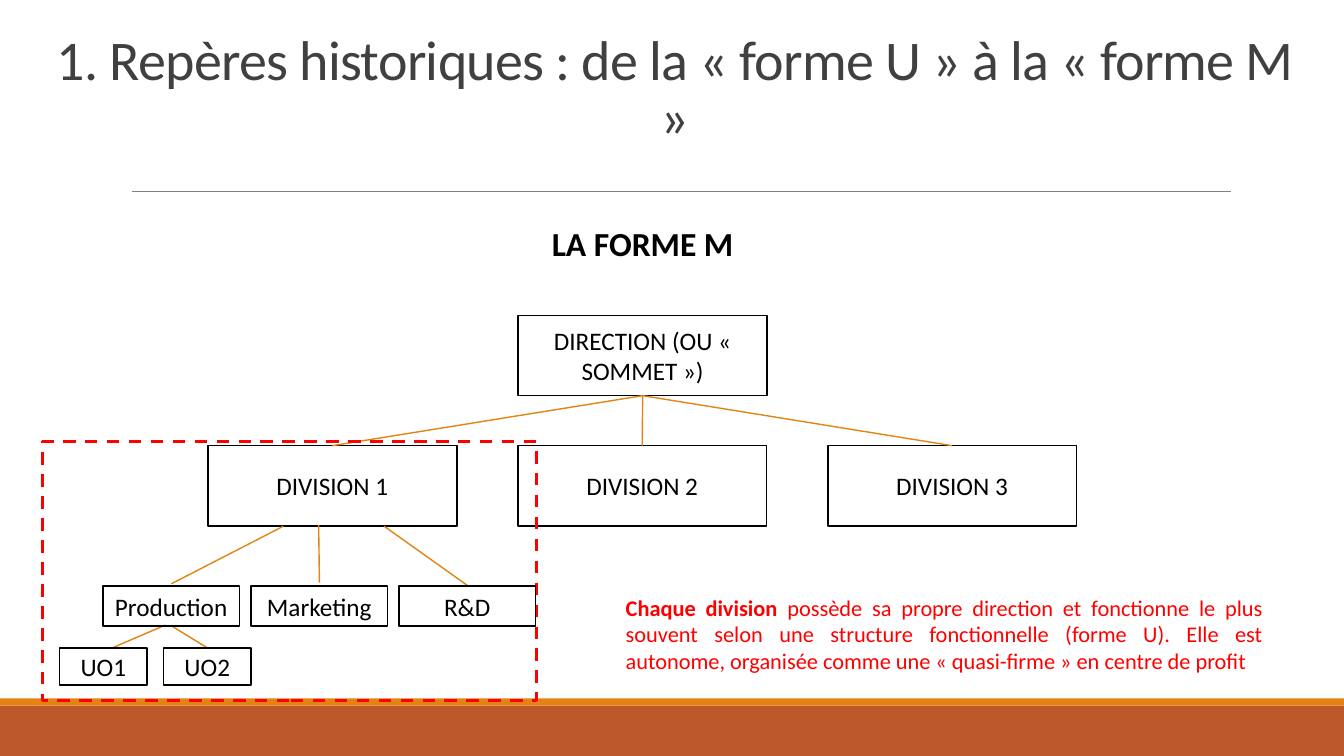
from dataclasses import dataclass

from lxml import etree
from pptx import Presentation
from pptx.dml.color import RGBColor
from pptx.enum import dml, shapes, text
from pptx.oxml import ns
from pptx.util import Cm, Pt

FONT = "Calibri"
BLACK, RED, ORANGE, RUST = "000000", "FF0000", "E48312", "BD582C"
TITLE_GREY, RULE_GREY = "404040", "808080"
SLIDE_WIDTH, SLIDE_HEIGHT = 33.87, 19.05


@dataclass(frozen=True)
class Box:
    left: float
    top: float
    width: float
    height: float
    label: str = ""

    @property
    def centre(self) -> float:
        return self.left + self.width / 2

    @property
    def bottom(self) -> float:
        return self.top + self.height

    def lengths(self) -> tuple:
        return Cm(self.left), Cm(self.top), Cm(self.width), Cm(self.height)


@dataclass(frozen=True)
class Link:
    start_x: float
    start_y: float
    end_x: float
    end_y: float


def box_row(labels: list[str], left: float, top: float, width: float,
            height: float, pitch: float) -> list[Box]:
    return [Box(left + i * pitch, top, width, height, label)
            for i, label in enumerate(labels)]


DIRECTION = Box(13.06, 7.95, 6.27, 2.02, "DIRECTION (OU « SOMMET »)")
DIVISIONS = box_row(["DIVISION 1", "DIVISION 2", "DIVISION 3"],
                    5.24, 11.23, 6.27, 2.02, 7.81)
FUNCTIONS = box_row(["Production", "Marketing", "R&D"],
                    2.59, 14.76, 3.45, 1.02, 3.73)
UNITS = box_row(["UO1", "UO2"], 1.5, 16.33, 2.21, 0.94, 2.62)
DIVISION_FRAME = Box(1.07, 11.13, 12.45, 6.53)
BANDS = [(Box(0, 17.78, SLIDE_WIDTH, 1.27), RUST),
         (Box(0, 17.6, SLIDE_WIDTH, 0.18), ORANGE)]
TITLE = Box(0.69, 1.73, 32.64, 2.16,
            "1. Repères historiques : de la « forme U » à la « forme M »")
SUBTITLE = Box(13.06, 5.44, 6.27, 1.37, "LA FORME M")
NOTE = Box(15.52, 14.68, 16.56, 2.59)
NOTE_RUNS = [
    ("Chaque division", True),
    (" possède sa propre direction et fonctionne le plus souvent selon une "
     "structure fonctionnelle (forme U). Elle est autonome, organisée comme "
     "une « quasi-firme » en centre de profit", False),
]
TITLE_RULE = Link(3.33, 4.83, 31.01, 4.83)
LINKS = [Link(DIRECTION.centre, DIRECTION.bottom, division.centre, division.top)
         for division in DIVISIONS] + [
    Link(7.14, 13.26, 4.32, 14.71),
    Link(8.03, 13.23, 8.05, 14.68),
    Link(9.68, 13.26, 11.79, 14.76),
    Link(4.17, 15.75, 2.82, 16.33),
    Link(4.32, 15.77, 5.23, 16.33),
]


def colour(value: str) -> RGBColor:
    return RGBColor.from_string(value)


def format_paragraph(paragraph, size: float, hex_colour: str,
                     alignment=text.PP_ALIGN.CENTER) -> None:
    paragraph.alignment = alignment
    paragraph.font.name = FONT
    paragraph.font.size = Pt(size)
    paragraph.font.color.rgb = colour(hex_colour)


def wrap_text(shape, anchor=text.MSO_ANCHOR.MIDDLE):
    """Turn wrapping on, anchor the text and return the first paragraph."""
    frame = shape.text_frame
    frame.word_wrap = True
    frame.vertical_anchor = anchor
    return frame.paragraphs[0]


def add_rectangle(slide, box: Box):
    shape = slide.shapes.add_shape(shapes.MSO_SHAPE.RECTANGLE, *box.lengths())
    shape.shadow.inherit = False
    return shape


def add_band(slide, box: Box, fill: str) -> None:
    band = add_rectangle(slide, box)
    band.fill.solid()
    band.fill.fore_color.rgb = colour(fill)
    band.line.fill.background()


def add_outline(slide, box: Box, line: str = BLACK, weight: float = 1.25):
    shape = add_rectangle(slide, box)
    shape.fill.background()
    shape.line.color.rgb = colour(line)
    shape.line.width = Pt(weight)
    return shape


def add_unit_box(slide, box: Box) -> None:
    paragraph = wrap_text(add_outline(slide, box))
    paragraph.text = box.label
    format_paragraph(paragraph, 18, BLACK)


def add_link(slide, link: Link, line: str = ORANGE, weight: float = 1) -> None:
    connector = slide.shapes.add_connector(
        shapes.MSO_CONNECTOR.STRAIGHT, Cm(link.start_x), Cm(link.start_y),
        Cm(link.end_x), Cm(link.end_y))
    connector.line.color.rgb = colour(line)
    connector.line.width = Pt(weight)
    properties = connector._element.spPr
    etree.SubElement(properties, ns.qn("a:effectLst"))


def set_title(slide) -> None:
    title = slide.shapes.title
    title.left, title.top, title.width, title.height = TITLE.lengths()
    paragraph = wrap_text(title, text.MSO_ANCHOR.BOTTOM)
    title.text_frame.auto_size = text.MSO_AUTO_SIZE.NONE
    run = paragraph.add_run()
    run.text = TITLE.label
    run._r.get_or_add_rPr().set("spc", "-50")
    format_paragraph(paragraph, 40, TITLE_GREY)
    paragraph.line_spacing = 0.85


def add_texts(slide) -> None:
    subtitle = wrap_text(slide.shapes.add_textbox(*SUBTITLE.lengths()))
    subtitle.text = SUBTITLE.label
    format_paragraph(subtitle, 24, BLACK)
    subtitle.font.bold = True

    note = wrap_text(slide.shapes.add_textbox(*NOTE.lengths()))
    for words, bold in NOTE_RUNS:
        run = note.add_run()
        run.text = words
        run.font.bold = bold
    format_paragraph(note, 16, RED, text.PP_ALIGN.JUSTIFY)


def main() -> None:
    presentation = Presentation()
    presentation.slide_width = Cm(SLIDE_WIDTH)
    presentation.slide_height = Cm(SLIDE_HEIGHT)
    slide = presentation.slides.add_slide(presentation.slide_layouts[5])

    for band, fill in BANDS:
        add_band(slide, band, fill)
    add_link(slide, TITLE_RULE, RULE_GREY, 0.5)
    set_title(slide)
    add_texts(slide)
    for box in [DIRECTION, *DIVISIONS]:
        add_unit_box(slide, box)
    for link in LINKS:
        add_link(slide, link)
    frame = add_outline(slide, DIVISION_FRAME, RED, 2.25)
    frame.line.dash_style = dml.MSO_LINE.DASH
    for box in FUNCTIONS + UNITS:
        add_unit_box(slide, box)

    presentation.save("out.pptx")


if __name__ == "__main__":
    main()
